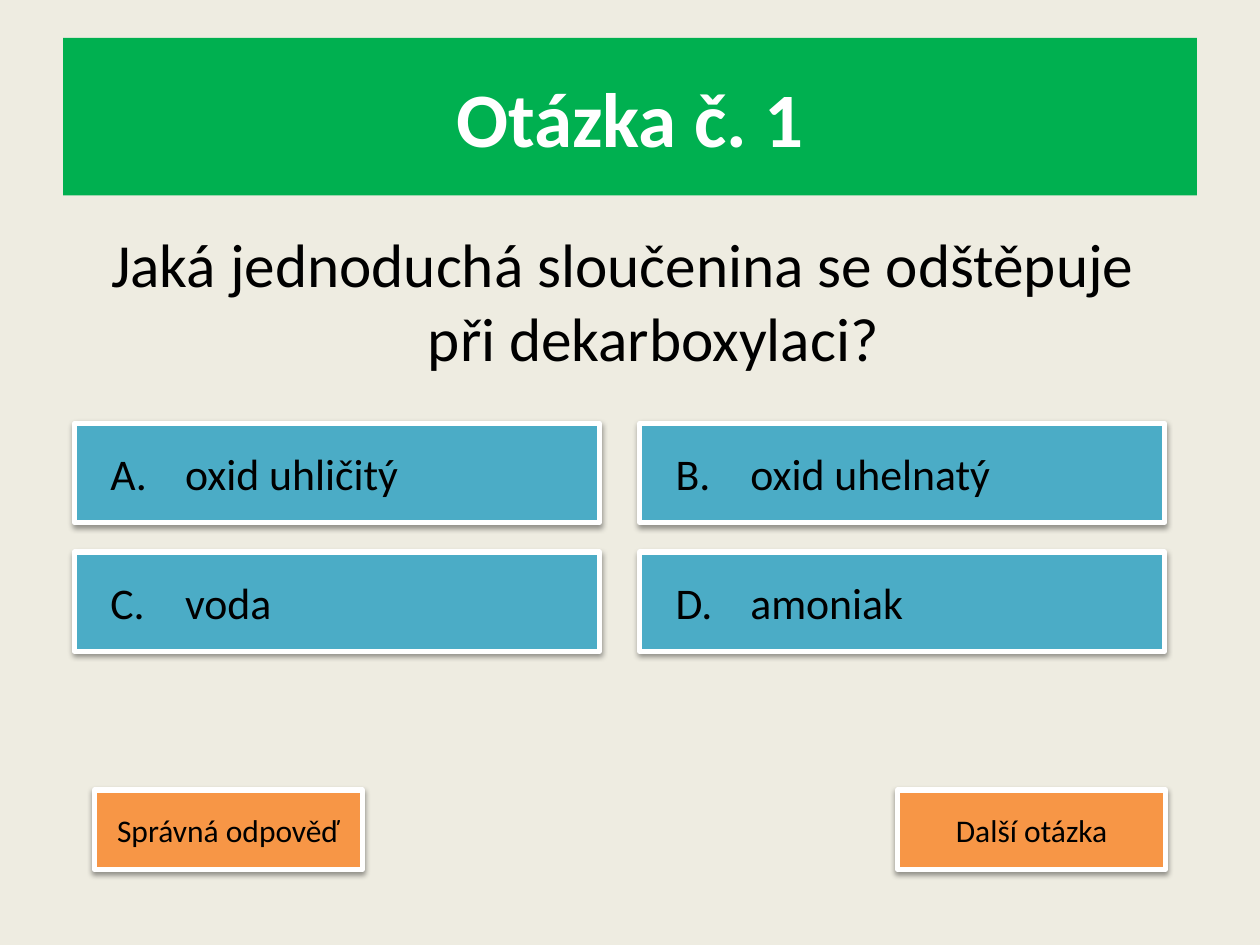
import lxml.etree
import pptx
import pptx.dml.color
import pptx.enum.shapes
import pptx.enum.text
import pptx.oxml
import pptx.oxml.ns
import pptx.util

Pt = pptx.util.Pt
RGBColor = pptx.dml.color.RGBColor
ALIGN = pptx.enum.text.PP_ALIGN
MIDDLE = pptx.enum.text.MSO_ANCHOR.MIDDLE

CREAM = RGBColor(0xEE, 0xEC, 0xE1)
GREEN = RGBColor(0x00, 0xB0, 0x50)
BLUE = RGBColor(0x4B, 0xAC, 0xC6)
ORANGE = RGBColor(0xF7, 0x96, 0x46)
WHITE = RGBColor(0xFF, 0xFF, 0xFF)
BLACK = RGBColor(0x00, 0x00, 0x00)

FONT = "Calibri"
ANSWERS = ["oxid uhličitý", "oxid uhelnatý", "voda", "amoniak"]
BUTTONS = [(54, "Správná odpověď"), (513, "Další otázka")]
TABS = [13.5, 56.25]

SHADOW = (
    f'<a:effectLst {pptx.oxml.ns.nsdecls("a")}>'
    f'<a:outerShdw blurRad="{Pt(3.1)}" dist="{Pt(1.6)}" dir="5400000" rotWithShape="0">'
    '<a:srgbClr val="000000"><a:alpha val="38000"/></a:srgbClr>'
    '</a:outerShdw></a:effectLst>'
)


def place(shape, left, top, width, height):
    shape.left, shape.top = Pt(left), Pt(top)
    shape.width, shape.height = Pt(width), Pt(height)


def add_run(para, text, size, color, bold=False):
    run = para.add_run()
    run.text = text
    run.font.name = FONT
    run.font.size = Pt(size)
    run.font.bold = bold
    run.font.color.rgb = color


def add_title(slide, text):
    title = slide.shapes.title
    place(title, 36, 21.6, 648, 90)
    title.fill.solid()
    title.fill.fore_color.rgb = GREEN
    title.text_frame.vertical_anchor = MIDDLE
    para = title.text_frame.paragraphs[0]
    para.alignment = ALIGN.CENTER
    add_run(para, text, 44, WHITE, bold=True)


def add_question(slide, first, second):
    box = slide.shapes.add_textbox(Pt(36), Pt(126), Pt(648), Pt(325.5))
    box.text_frame.word_wrap = True
    para = box.text_frame.paragraphs[0]
    para.alignment = ALIGN.CENTER
    para.space_before = Pt(3)
    props = para._p.get_or_add_pPr()
    props.set("marL", str(Pt(27)))
    props.set("indent", str(Pt(-27)))
    add_run(para, first, 35, BLACK)
    para.add_line_break()
    add_run(para, second, 35, BLACK)


def add_card(slide, left, top, width, height, color):
    """Add a filled, white-edged box with a soft shadow; return its paragraph."""
    card = slide.shapes.add_shape(
        pptx.enum.shapes.MSO_SHAPE.RECTANGLE,
        Pt(left), Pt(top), Pt(width), Pt(height))
    card.fill.solid()
    card.fill.fore_color.rgb = color
    card.line.color.rgb = WHITE
    card.line.width = Pt(3)
    card._element.spPr.append(pptx.oxml.parse_xml(SHADOW))
    card.text_frame.vertical_anchor = MIDDLE
    return card.text_frame.paragraphs[0]


def set_tabs(para, stops):
    props = para._p.get_or_add_pPr()
    tabs = lxml.etree.SubElement(props, pptx.oxml.ns.qn("a:tabLst"))
    for stop in stops:
        lxml.etree.SubElement(tabs, pptx.oxml.ns.qn("a:tab"),
                              pos=str(Pt(stop)), algn="l")


def add_answer(slide, index, text):
    row, col = divmod(index, 2)
    para = add_card(slide, 42.5 + 323 * col, 241.9 + 73.6 * row, 300, 56.7, BLUE)
    para.alignment = ALIGN.LEFT
    set_tabs(para, TABS)
    add_run(para, f"\t{'ABCD'[index]}.\t{text}", 25, BLACK)


def add_button(slide, left, text):
    para = add_card(slide, left, 451.5, 153, 45.4, ORANGE)
    para.alignment = ALIGN.CENTER
    add_run(para, text, 18, BLACK)


def main():
    deck = pptx.Presentation()
    deck.slide_width, deck.slide_height = Pt(720), Pt(540)
    slide = deck.slides.add_slide(deck.slide_layouts[5])
    slide.background.fill.solid()
    slide.background.fill.fore_color.rgb = CREAM

    add_title(slide, "Otázka č. 1")
    add_question(slide, "Jaká jednoduchá sloučenina se odštěpuje ",
                 "při dekarboxylaci?")
    for index, text in enumerate(ANSWERS):
        add_answer(slide, index, text)
    for left, text in BUTTONS:
        add_button(slide, left, text)
    deck.save("out.pptx")


if __name__ == "__main__":
    main()
